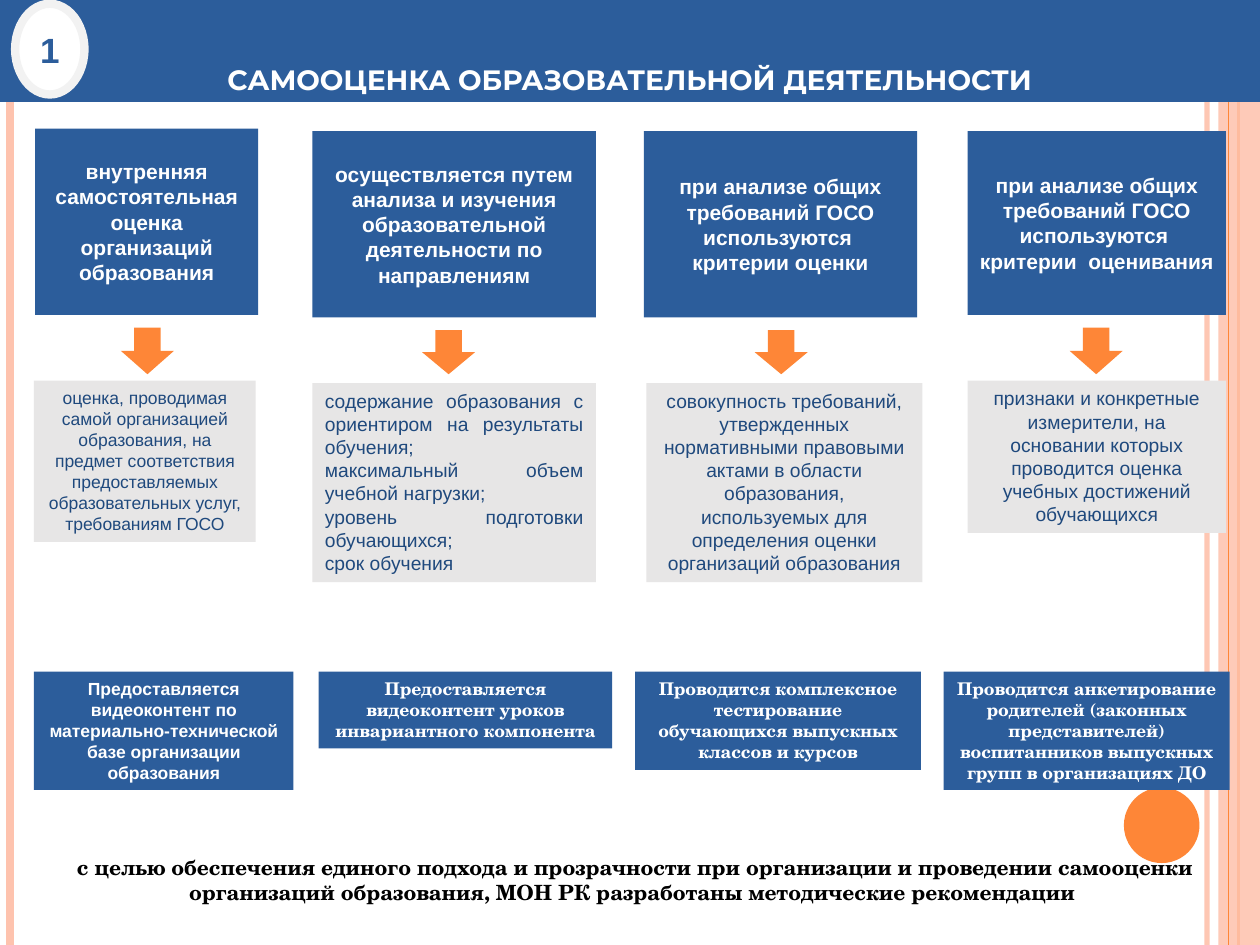
from pptx import Presentation
from pptx.dml.color import RGBColor
from pptx.enum.shapes import MSO_CONNECTOR, MSO_SHAPE
from pptx.enum.text import MSO_ANCHOR, PP_ALIGN
from pptx.oxml.ns import qn
from pptx.util import Inches, Pt
from lxml.etree import SubElement

BLUE, NAVY, ORANGE, PEACH = "2C5D9B", "1F497D", "FE8637", "FEC3AE"
WHITE, GRAY, PALE, BLACK = "FFFFFF", "E7E6E6", "F2F2F2", "000000"
SANS, SERIF, DISPLAY = "Arial", "TeX Gyre Schola", "Montserrat"

TITLE = "САМООЦЕНКА ОБРАЗОВАТЕЛЬНОЙ ДЕЯТЕЛЬНОСТИ"
FOOTER = ("с целью обеспечения единого подхода и прозрачности при организации и проведении "
          "самооценки организаций образования, МОН РК разработаны методические рекомендации ")

STRIPES = [
    (9.58, PEACH, 3, 93),
    (0.08, PEACH, 4.5, 100),
    (9.83, ORANGE, 1.5, 100),
]
THIN_STRIPE = (9.75, ORANGE, 0.75, 100)

HEADINGS = [
    ((0.28, 1.02, 1.77, 1.48), ["внутренняя самостоятельная оценка организаций образования"]),
    ((2.48, 1.04, 2.25, 1.48),
     ["осуществляется путем анализа и изучения образовательной деятельности по направлениям"]),
    ((5.11, 1.04, 2.17, 1.48),
     ["при анализе общих требований ГОСО используются ", "критерии оценки"]),
    ((7.68, 1.04, 2.05, 1.46),
     ["при анализе общих требований ГОСО используются ", "критерии  оценивания"]),
]
DETAILS = [
    ((0.27, 3.02, 1.76, 1.28), 10, PP_ALIGN.CENTER,
     ["оценка, проводимая самой организацией образования, на предмет соответствия "
      "предоставляемых образовательных услуг, требованиям ГОСО"]),
    ((2.48, 3.04, 2.25, 1.58), 11, PP_ALIGN.JUSTIFY,
     ["содержание образования с ориентиром на результаты обучения;",
      "максимальный объем учебной нагрузки;",
      "уровень подготовки обучающихся;",
      "срок обучения"]),
    ((5.13, 3.04, 2.19, 1.58), 11, PP_ALIGN.CENTER,
     ["совокупность требований, утвержденных нормативными правовыми актами в области "
      "образования, используемых для определения оценки организаций образования"]),
    ((7.68, 3.02, 2.05, 1.21), 11, PP_ALIGN.CENTER,
     ["признаки и конкретные измерители, на основании которых проводится оценка "
      "учебных достижений обучающихся"]),
]
ARROWS = [(0.96, 2.6), (3.35, 2.62), (5.99, 2.62), (8.49, 2.6)]
ARROW_WIDTH, ARROW_BOTTOM = 0.42, 2.97
ACTIONS_TOP = 5.33
ACTIONS = [
    (0.27, 2.06, 0.94, SANS,
     "Предоставляется видеоконтент по материально-технической базе организации образования"),
    (2.53, 2.33, 0.61, SERIF, "Предоставляется видеоконтент уроков инвариантного компонента"),
    (5.04, 2.27, 0.78, SERIF,
     "Проводится комплексное тестирование обучающихся выпускных классов и курсов"),
    (7.49, 2.27, 0.94, SERIF,
     "Проводится анкетирование родителей (законных представителей) воспитанников "
     "выпускных групп в организациях ДО"),
]


def color(value):
    return RGBColor.from_string(value)


def set_opacity(element, percent):
    if percent < 100:
        target = next(element.iter(qn("a:srgbClr")))
        SubElement(target, qn("a:alpha"), val=str(percent * 1000))


def add_stripe(page, left, shade, width, opacity):
    stripe = page.shapes.add_connector(
        MSO_CONNECTOR.STRAIGHT, Inches(left), Inches(0), Inches(left), Inches(7.5))
    stripe.line.color.rgb = color(shade)
    stripe.line.width = Pt(width)
    properties = stripe.element.spPr
    set_opacity(properties, opacity)
    SubElement(properties, qn("a:effectLst"))


def add_block(page, place, fill, kind=MSO_SHAPE.RECTANGLE):
    block = page.shapes.add_shape(kind, *map(Inches, place))
    block.shadow.inherit = False
    block.fill.solid()
    block.fill.fore_color.rgb = color(fill)
    block.line.fill.background()
    return block


def write(box, lines, size, shade, name=SANS, bold=True, anchor=MSO_ANCHOR.TOP,
          align=PP_ALIGN.CENTER, margins=(0.1, 0.05)):
    frame = box.text_frame
    side, edge = map(Inches, margins)
    layout = {"word_wrap": True, "vertical_anchor": anchor, "margin_left": side,
              "margin_right": side, "margin_top": edge, "margin_bottom": edge}
    for key, value in layout.items():
        setattr(frame, key, value)
    for index, line in enumerate(lines):
        para = frame.add_paragraph() if index else frame.paragraphs[0]
        para.alignment = align
        span = para.add_run()
        span.text = line
        for key, value in {"size": Pt(size), "name": name, "bold": bold}.items():
            setattr(span.font, key, value)
        span.font.color.rgb = color(shade)


def main():
    deck = Presentation()
    deck.slide_width, deck.slide_height = Inches(10), Inches(7.5)
    page = deck.slides.add_slide(deck.slide_layouts[6])

    for stripe in STRIPES:
        add_stripe(page, *stripe)
    band = add_block(page, (9.67, 0, 0.33, 7.5), PEACH)
    set_opacity(band.element.spPr, 87)
    add_stripe(page, *THIN_STRIPE)
    add_block(page, (8.92, 6.25, 0.6, 0.6), ORANGE, MSO_SHAPE.OVAL)

    header = add_block(page, (0, -0.03, 10, 0.84), BLUE)
    write(header, [TITLE], 16, WHITE, DISPLAY, anchor=MSO_ANCHOR.BOTTOM)
    badge = add_block(page, (0.12, 0.03, 0.55, 0.72), WHITE, MSO_SHAPE.OVAL)
    badge.line.color.rgb = color(PALE)
    badge.line.width = Pt(4.75)
    write(badge, ["1"], 20, BLUE, anchor=MSO_ANCHOR.MIDDLE)

    for place, lines in HEADINGS:
        write(add_block(page, place, BLUE), lines, 12, WHITE,
              anchor=MSO_ANCHOR.MIDDLE, margins=(0.07, 0.04))
    for left, top in ARROWS:
        place = (left, top, ARROW_WIDTH, ARROW_BOTTOM - top)
        add_block(page, place, ORANGE, MSO_SHAPE.UP_ARROW).rotation = 180
    for place, size, align, lines in DETAILS:
        write(add_block(page, place, GRAY), lines, size, NAVY, bold=False, align=align)
    for left, width, height, name, text in ACTIONS:
        box = add_block(page, (left, ACTIONS_TOP, width, height), BLUE)
        write(box, [text], 10, WHITE, name)

    footer = page.shapes.add_textbox(*map(Inches, (0.3, 6.73, 9.49, 0.5)))
    write(footer, [FOOTER], 12, BLACK, SERIF)
    deck.save("out.pptx")


if __name__ == "__main__":
    main()
